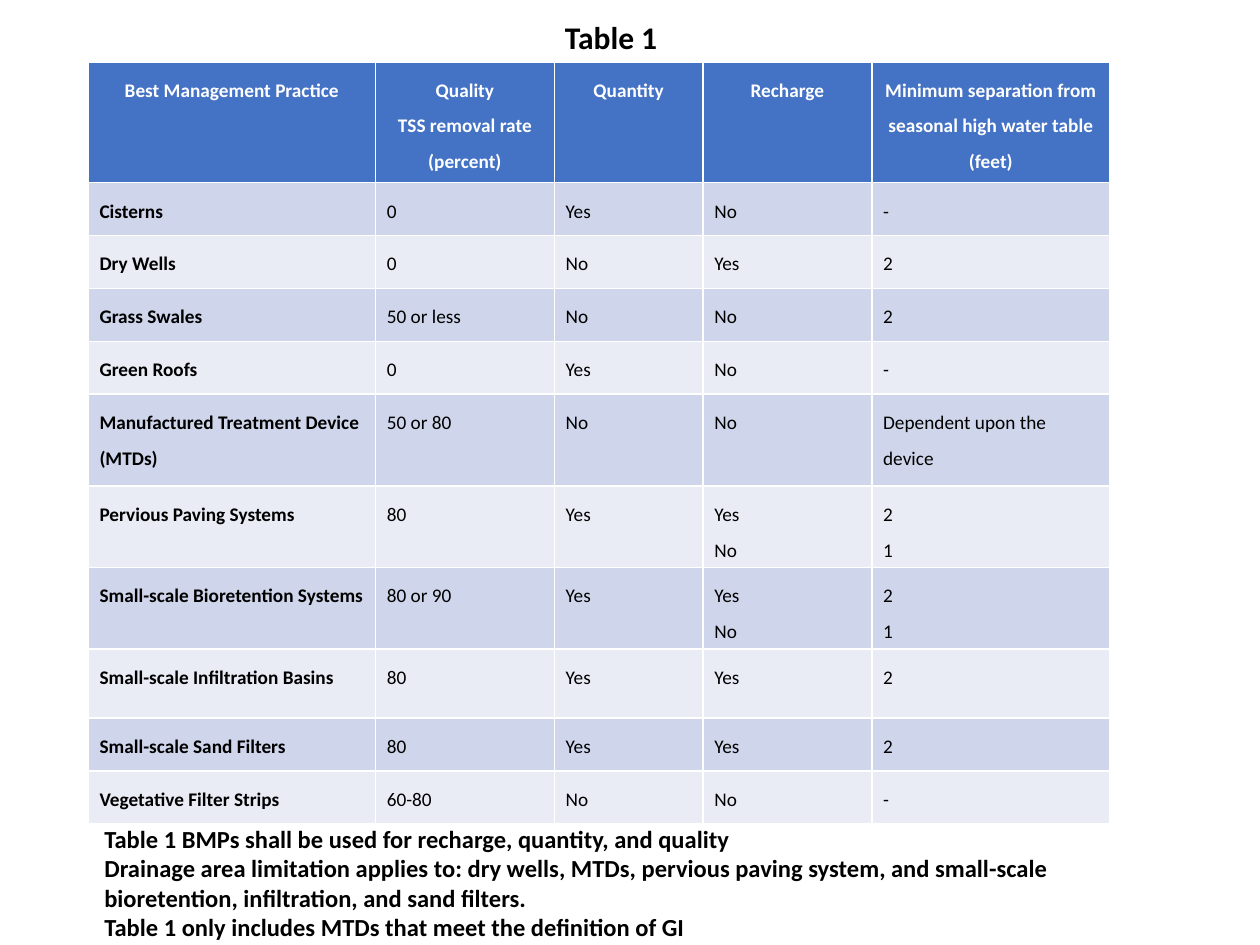
from typing import NamedTuple

from pptx import Presentation
from pptx.dml.color import RGBColor
from pptx.enum import text as t
from pptx.util import Inches, Pt

FONT = "Calibri"
BLACK, WHITE, BLUE = "000000", "FFFFFF", "4472C4"
BANDS = "CFD5EA", "E9EBF5"
LEFT, CENTER = t.PP_ALIGN.LEFT, t.PP_ALIGN.CENTER


class Row(NamedTuple):
    high: float
    name: str
    quality: str
    amount: str
    recharge: str
    depth: str

    @property
    def cells(self) -> tuple[str, ...]:
        return self[1:]


class Note(NamedTuple):
    left: float
    top: float
    wide: float
    high: float
    words: str
    size: int
    align: t.PP_ALIGN


WIDTHS = 2.28, 1.42, 1.18, 1.34, 1.89
HEAD = Row(0.96, "Best Management Practice",
           "Quality\nTSS removal rate (percent)", "Quantity", "Recharge",
           "Minimum separation from seasonal high water table\n(feet)")
BODY = [
    Row(0.42, "Cisterns", "0", "Yes", "No", "-"),
    Row(0.42, "Dry Wells", "0", "No", "Yes", "2"),
    Row(0.42, "Grass Swales", "50 or less", "No", "No", "2"),
    Row(0.42, "Green Roofs", "0", "Yes", "No", "-"),
    Row(0.73, "Manufactured Treatment Device (MTDs)", "50 or 80", "No", "No",
        "Dependent upon the device"),
    Row(0.55, "Pervious Paving Systems", "80", "Yes", "Yes\nNo", "2\n1"),
    Row(0.55, "Small-scale Bioretention Systems", "80 or 90", "Yes",
        "Yes\nNo", "2\n1"),
    Row(0.55, "Small-scale Infiltration Basins", "80", "Yes", "Yes", "2"),
    Row(0.42, "Small-scale Sand Filters", "80", "Yes", "Yes", "2"),
    Row(0.42, "Vegetative Filter Strips", "60-80", "No", "No", "-"),
]
NOTES = [
    Note(3.64, 0.09, 2.42, 0.4, "Table 1", 18, CENTER),
    Note(0.73, 6.49, 8.23, 1.28,
         "Table 1 BMPs shall be used for recharge, quantity, and quality\n"
         "Drainage area limitation applies to: dry wells, MTDs, pervious "
         "paving system, and small-scale bioretention, infiltration, and "
         "sand filters.\n"
         "Table 1 only includes MTDs that meet the definition of GI",
         14, LEFT),
]


def rgb(code: str) -> RGBColor:
    return RGBColor.from_string(code)


def write(frame, words: str, size: int, color: str, bold: bool,
          align: t.PP_ALIGN, lead: float = 1.0) -> None:
    """Fill a text frame, one paragraph per line of words."""
    frame.text = words
    for par in frame.paragraphs:
        par.alignment, par.line_spacing = align, lead
        font = par.font
        font.name, font.size, font.bold = FONT, Pt(size), bold
        font.color.rgb = rgb(color)


def add_note(slide, note: Note) -> None:
    box = slide.shapes.add_textbox(Inches(note.left), Inches(note.top),
                                   Inches(note.wide), Inches(note.high))
    box.text_frame.word_wrap = True
    write(box.text_frame, note.words, note.size, BLACK, True, note.align)


def add_grid(slide, rows: list[Row]) -> None:
    """Add the table; its default style draws the white borders."""
    grid = slide.shapes.add_table(
        len(rows), len(WIDTHS), Inches(0.7), Inches(0.49),
        Inches(sum(WIDTHS)), Inches(sum(row.high for row in rows))).table
    for col, wide in zip(grid.columns, WIDTHS):
        col.width = Inches(wide)
    for r, row in enumerate(rows):
        grid.rows[r].height = Inches(row.high)
        top = r == 0
        fill = BLUE if top else BANDS[(r - 1) % 2]
        for c, words in enumerate(row.cells):
            cell = grid.cell(r, c)
            cell.margin_left = cell.margin_right = Inches(0.09)
            cell.margin_top = cell.margin_bottom = Inches(0.04)
            cell.fill.solid()
            cell.fill.fore_color.rgb = rgb(fill)
            write(cell.text_frame, words, 11, WHITE if top else BLACK,
                  top or c == 0, CENTER if top else LEFT, 1.5)


def main() -> None:
    deck = Presentation()
    deck.slide_width, deck.slide_height = Inches(10), Inches(7.5)
    slide = deck.slides.add_slide(deck.slide_layouts[6])
    add_grid(slide, [HEAD, *BODY])
    for note in NOTES:
        add_note(slide, note)
    deck.save("out.pptx")


if __name__ == "__main__":
    main()
